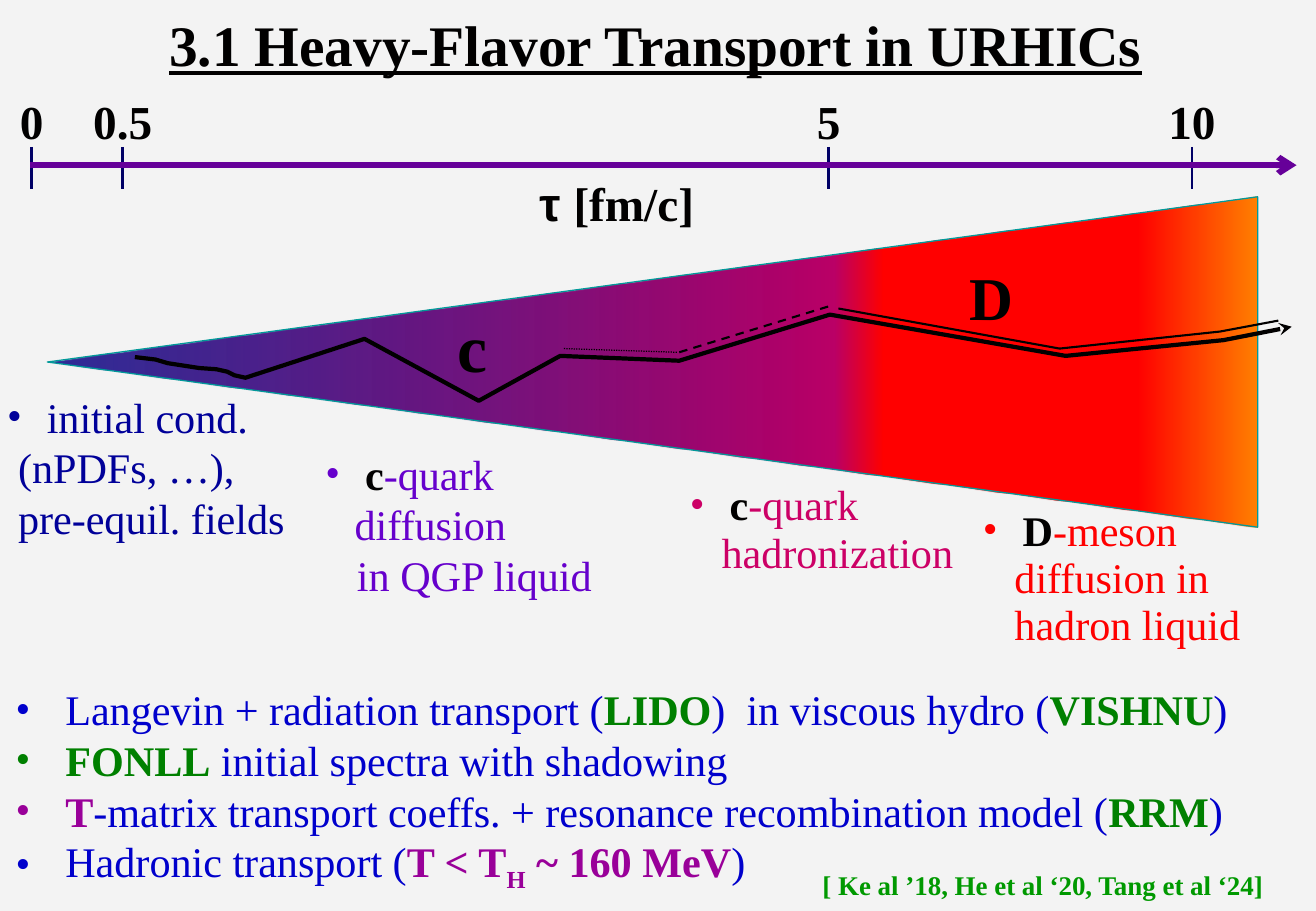
"""Builds the slide on heavy-flavor transport in URHICs."""
from lxml.etree import SubElement
from pptx import Presentation
from pptx.dml.color import RGBColor
from pptx.enum.dml import MSO_LINE
from pptx.enum.shapes import MSO_CONNECTOR, MSO_SHAPE
from pptx.enum.text import MSO_ANCHOR, PP_ALIGN
from pptx.oxml import parse_xml
from pptx.oxml.ns import nsdecls, qn
from pptx.util import Inches, Pt

BLACK, GREEN, PURPLE = "010000", "008000", "990099"


def rgb(value):
    return RGBColor.from_string(value)


def add_text(paragraph, text, size=25, color=BLACK, bold=False, underline=False,
             font="Times New Roman", baseline=None):
    run = paragraph.add_run()
    run.text = text
    run.font.name = font
    run.font.size = Pt(size)
    run.font.bold = bold
    run.font.underline = underline
    run.font.color.rgb = rgb(color)
    if baseline:
        run.font._element.set("baseline", str(baseline * 1000))


class TransportSlide:
    def __init__(self, presentation):
        self.slide = presentation.slides.add_slide(presentation.slide_layouts[6])
        self.shapes = self.slide.shapes
        self.slide.background.fill.solid()
        self.slide.background.fill.fore_color.rgb = rgb("F3F3F3")

    def frame(self, left, top, width, height, wrap=True):
        box = self.shapes.add_textbox(Inches(left), Inches(top), Inches(width), Inches(height))
        box.text_frame.word_wrap = wrap
        return box.text_frame

    def label(self, text, left, top, width, height, align=PP_ALIGN.LEFT, **style):
        frame = self.frame(left, top, width, height)
        frame.vertical_anchor = MSO_ANCHOR.MIDDLE
        paragraph = frame.paragraphs[0]
        paragraph.alignment = align
        add_text(paragraph, text, **style)
        return paragraph

    def notes(self, bounds, color, lines, wrap=False, spacing=None):
        """Each line holds bulleted, indent and runs; a run with its own format is bold."""
        frame = self.frame(*bounds, wrap=wrap)
        for number, (bulleted, indent, runs) in enumerate(lines):
            paragraph = frame.add_paragraph() if number else frame.paragraphs[0]
            if spacing:
                paragraph.line_spacing = Pt(spacing)
            properties = paragraph._p.get_or_add_pPr()
            properties.set("marL", str(Inches(indent)))
            if bulleted:
                properties.set("indent", str(-Inches(indent)))
                SubElement(properties, qn("a:buFont"), typeface="Times New Roman")
                SubElement(properties, qn("a:buChar"), char="•")
            for run in runs:
                if isinstance(run, str):
                    add_text(paragraph, run, color=color)
                else:
                    text, style = run
                    add_text(paragraph, text, bold=True, **style)

    def arrowhead(self, line, kind):
        SubElement(line._get_or_add_ln(), qn("a:tailEnd"), type=kind)

    def line(self, start, end, color, width, dash=None, arrow=None):
        connector = self.shapes.add_connector(
            MSO_CONNECTOR.STRAIGHT, *(Inches(value) for value in start + end))
        connector.line.color.rgb = rgb(color)
        connector.line.width = Pt(width)
        if dash:
            connector.line.dash_style = dash
        if arrow:
            self.arrowhead(connector.line, arrow)
        SubElement(connector._element.spPr, qn("a:effectLst"))

    def track(self, points, width, arrow=None):
        start, *rest = [(Inches(x), Inches(y)) for x, y in points]
        builder = self.shapes.build_freeform(*start)
        builder.add_line_segments(rest, close=False)
        path = builder.convert_to_shape()
        path.shadow.inherit = False
        path.fill.background()
        path.line.color.rgb = rgb(BLACK)
        path.line.width = Pt(width)
        if arrow:
            self.arrowhead(path.line, arrow)

    def fireball(self, left, top, width, height, stops):
        cone = self.shapes.add_shape(MSO_SHAPE.ISOSCELES_TRIANGLE, Inches(left),
                                     Inches(top), Inches(width), Inches(height))
        cone.rotation = 270
        cone.shadow.inherit = False
        colors = "".join(
            f'<a:gs pos="{position * 1000}"><a:srgbClr val="{color}">'
            f'<a:alpha val="{alpha * 1000}"/></a:srgbClr></a:gs>'
            for position, color, alpha in stops)
        gradient = parse_xml(
            f'<a:gradFill {nsdecls("a")} rotWithShape="1"><a:gsLst>{colors}</a:gsLst>'
            '<a:lin ang="5400000" scaled="0"/></a:gradFill>')
        cone._element.spPr.find(qn("a:prstGeom")).addnext(gradient)
        cone.line.color.rgb = rgb("009999")
        cone.line.width = Pt(0.75)


def main():
    presentation = Presentation()
    presentation.slide_width, presentation.slide_height = Inches(10.83), Inches(7.5)
    page = TransportSlide(presentation)

    page.label("3.1 Heavy-Flavor Transport in URHICs", -0.07, -0.04, 10.93, 0.8,
               align=PP_ALIGN.CENTER, size=34, bold=True, underline=True)
    for time, x in (("0", 0.26), ("0.5", 1.01), ("5", 6.82), ("10", 9.81)):
        page.line((x, 1.21), (x, 1.56), "000066", 1.5)
        page.label(time, x - 0.4, 0.71, 0.8, 0.57, align=PP_ALIGN.CENTER, size=28, bold=True)

    page.fireball(4.01, -2, 2.72, 9.96, [
        (0, "000082", 81), (65, "BA0066", 100), (69, "FF0000", 100),
        (90, "FF0000", 100), (100, "FF8200", 100)])

    black, green, purple = {"color": BLACK}, {"color": GREEN}, {"color": PURPLE}
    page.notes((-0.04, 3.17, 2.52, 1.36), "000099", [
        (True, 0.24, [" initial cond."]),
        (False, 0.09, ["(nPDFs, …),"]),
        (False, 0.09, ["pre-equil. fields"])])
    page.notes((2.58, 3.64, 2.84, 0.94), "6600CC", [
        (True, 0.24, [" ", ("c", black), "-quark diffusion"]),
        (False, 0.26, ["in QGP liquid"])], wrap=True)
    page.notes((5.58, 3.92, 2.4, 0.89), "CC0066", [
        (True, 0.24, [" ", ("c", black), "-quark"]),
        (False, 0.26, ["hadronization"])], spacing=28)
    page.notes((7.99, 4.13, 2.35, 1.28), "FF0000", [
        (True, 0.24, [" ", ("D", black), "-meson"]),
        (False, 0.26, ["diffusion in"]),
        (False, 0.26, ["hadron liquid"])], spacing=28)

    page.track([(1.11, 2.94), (1.28, 2.96), (1.38, 2.99), (1.64, 3.03), (1.78, 3.04),
                (1.87, 3.06), (1.93, 3.09), (2.02, 3.11), (3, 2.79), (3.94, 3.3),
                (4.61, 2.93), (5.59, 2.97), (6.83, 2.59), (8.77, 2.93), (10.07, 2.8),
                (10.63, 2.69)], 2.5, arrow="stealth")
    page.track([(6.9, 2.54), (8.72, 2.87), (10.04, 2.73), (10.52, 2.64)], 1.25)
    page.line((5.59, 2.9), (6.86, 2.51), "000000", 1.25, dash=MSO_LINE.DASH)
    page.line((4.64, 2.87), (5.57, 2.9), "000000", 0.75, dash=MSO_LINE.ROUND_DOT)
    for particle, x, y, size in (("c", 3.67, 2.72, 40), ("D", 7.88, 2.28, 36)):
        quark = page.label(particle, x, y, 0.57, 0.53, size=size, bold=True)
        quark.line_spacing = Pt(28)

    page.line((0.25, 1.36), (10.67, 1.36), "660099", 3.5, arrow="arrow")
    axis_title = page.label("τ ", 4.34, 1.38, 1.48, 0.57, size=28, bold=True, font="Arial")
    add_text(axis_title, "[fm/c]", size=28, bold=True)

    page.notes((0.03, 5.58, 10.84, 1.78), "0000CC", [
        (True, 0.41, runs) for runs in (
            ["Langevin + radiation transport (", ("LIDO", green),
             ")  in viscous hydro (", ("VISHNU", green), ")"],
            [("FONLL", green), " initial spectra with shadowing"],
            [("T", purple), "-matrix transport coeffs. + resonance recombination model (",
             ("RRM", green), ")"],
            ["Hadronic transport (", ("T < T", purple),
             ("H", {"color": PURPLE, "baseline": -25}), (" ~ 160 MeV", purple), ")"])],
        wrap=True)
    page.label("[ Ke al ’18, He et al ‘20, Tang et al ‘24]", 6.67, 7.1, 4.07, 0.37,
               size=16, color="009900", bold=True)
    presentation.save("out.pptx")


if __name__ == "__main__":
    main()
